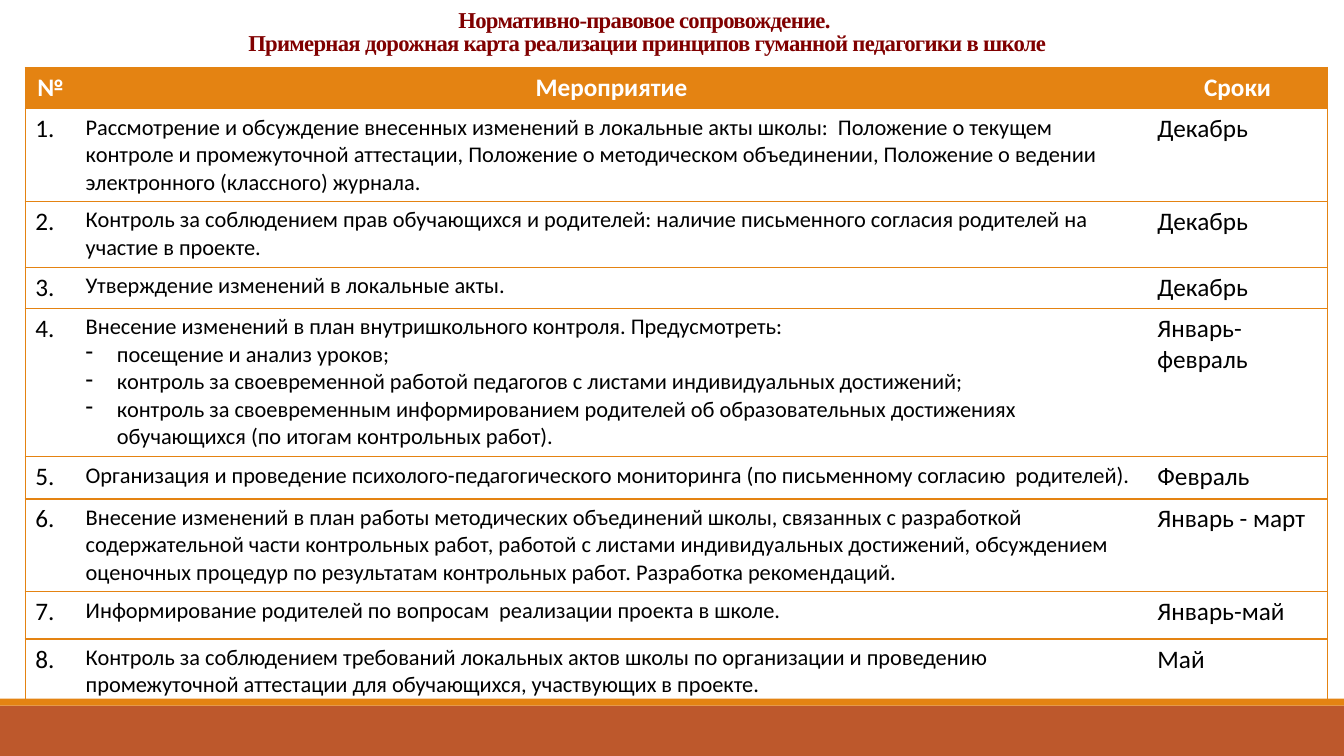
import dataclasses
import typing

import lxml.etree
import pptx
import pptx.dml.color
import pptx.enum.shapes
import pptx.enum.text
import pptx.oxml.ns
import pptx.util

COLORS = {
    "orange": "E48312",
    "rust": "BD582C",
    "maroon": "800000",
    "white": "FFFFFF",
    "black": "000000",
}
SLIDE_WIDTH = pptx.util.Inches(13.33)
SLIDE_HEIGHT = pptx.util.Inches(7.5)
COLUMN_SHARES = (3.75, 79.74, 13.43)
HEADINGS = ("№", "Мероприятие", "Сроки")
HEADING_SHARE = 5.47
CENTER = pptx.enum.text.PP_ALIGN.CENTER
LEFT = pptx.enum.text.PP_ALIGN.LEFT


@dataclasses.dataclass(frozen=True)
class Band:
    top: float
    height: float
    color: str


@dataclasses.dataclass(frozen=True)
class Step:
    activity: str
    term: str
    height: float
    points: tuple[str, ...] = ()


BANDS = (Band(93.33, 6.67, "rust"), Band(92.4, 0.93, "orange"))

STEPS = (
    Step("Рассмотрение и обсуждение внесенных изменений в локальные акты школы:  Положение о текущем "
         "контроле и промежуточной аттестации, Положение о методическом объединении, Положение о ведении "
         "электронного (классного) журнала.", "Декабрь", 12.27),
    Step("Контроль за соблюдением прав обучающихся и родителей: наличие письменного согласия родителей на "
         "участие в проекте.", "Декабрь", 8.67),
    Step("Утверждение изменений в локальные акты.", "Декабрь", 5.47),
    Step("Внесение изменений в план внутришкольного контроля. Предусмотреть:", "Январь-февраль", 19.6,
         ("посещение и анализ уроков;",
          "контроль за своевременной работой педагогов с листами индивидуальных достижений;",
          "контроль за своевременным информированием родителей об образовательных достижениях "
          "обучающихся (по итогам контрольных работ).")),
    Step("Организация и проведение психолого-педагогического мониторинга (по письменному согласию  родителей).",
         "Февраль", 5.6),
    Step("Внесение изменений в план работы методических объединений школы, связанных с разработкой "
         "содержательной части контрольных работ, работой с листами индивидуальных достижений, обсуждением "
         "оценочных процедур по результатам контрольных работ. Разработка рекомендаций.", "Январь - март", 12.27),
    Step("Информирование родителей по вопросам  реализации проекта в школе.", "Январь-май", 6.27),
    Step("Контроль за соблюдением требований локальных актов школы по организации и проведению "
         "промежуточной аттестации для обучающихся, участвующих в проекте.", "Май", 8.67),
)


def across(share: float) -> int:
    return round(SLIDE_WIDTH * share / 100)


def down(share: float) -> int:
    return round(SLIDE_HEIGHT * share / 100)


def rgb(color: str) -> pptx.dml.color.RGBColor:
    return pptx.dml.color.RGBColor.from_string(COLORS[color])


def format_font(font: typing.Any, name: str, size: float, color: str, bold: bool) -> None:
    for attribute, value in {"name": name, "size": pptx.util.Pt(size), "bold": bold}.items():
        setattr(font, attribute, value)
    font.color.rgb = rgb(color)


def add_element(parent: typing.Any, tag: str, **attributes: str) -> typing.Any:
    return lxml.etree.SubElement(parent, pptx.oxml.ns.qn(tag), **attributes)


def draw_band(slide: typing.Any, band: Band) -> None:
    shape = slide.shapes.add_shape(
        pptx.enum.shapes.MSO_SHAPE.RECTANGLE, 0, down(band.top), SLIDE_WIDTH, down(band.height))
    shape.shadow.inherit = False
    shape.fill.solid()
    shape.fill.fore_color.rgb = rgb(band.color)
    shape.line.fill.background()


def draw_title(slide: typing.Any) -> None:
    shape = slide.shapes.add_textbox(0, 0, across(96.25), down(8.13))
    frame = shape.text_frame
    frame.word_wrap = True
    frame.vertical_anchor = pptx.enum.text.MSO_ANCHOR.BOTTOM
    paragraph = frame.paragraphs[0]
    paragraph.alignment = CENTER
    paragraph.line_spacing = 0.85
    paragraph.text = ("Нормативно-правовое сопровождение. \v"
                      "Примерная дорожная карта реализации принципов гуманной педагогики в школе")
    for run in paragraph.runs:
        format_font(run.font, "Times New Roman", 16.2, "maroon", True)
        run.font._element.set("spc", "-50")


def draw_borders(cell: typing.Any, column: int) -> None:
    visible = {"a:lnL": column == 0, "a:lnR": column == len(HEADINGS) - 1, "a:lnT": True, "a:lnB": True}
    properties = cell._tc.get_or_add_tcPr()
    for tag, shown in visible.items():
        line = add_element(properties, tag, w=str(pptx.util.Pt(1)))
        if shown:
            add_element(add_element(line, "a:solidFill"), "a:srgbClr", val=COLORS["orange"])
        else:
            add_element(line, "a:noFill")


def write_cell(cell: typing.Any, lines: tuple[str, ...], size: float, heading: bool) -> None:
    cell.text_frame.text = "\n".join(lines)
    for index, paragraph in enumerate(cell.text_frame.paragraphs):
        paragraph.alignment = CENTER if heading else LEFT
        format_font(paragraph.runs[0].font, "Calibri", size, "white" if heading else "black", heading)
        if index:
            properties = paragraph._p.get_or_add_pPr()
            indent = pptx.util.Inches(0.31)
            properties.set("marL", str(indent))
            properties.set("indent", str(-indent))
            add_element(properties, "a:buChar", char="-")
    if heading:
        cell.fill.solid()
        cell.fill.fore_color.rgb = rgb("orange")
    else:
        cell.fill.background()


def draw_roadmap(slide: typing.Any) -> None:
    heights = (HEADING_SHARE, *(step.height for step in STEPS))
    table = slide.shapes.add_table(
        len(heights), len(HEADINGS), across(1.88), down(8.93),
        across(sum(COLUMN_SHARES)), down(sum(heights))).table
    table.horz_banding = False
    for column, share in zip(table.columns, COLUMN_SHARES):
        column.width = across(share)
    for row, share in zip(table.rows, heights):
        row.height = down(share)
    contents = [tuple((heading,) for heading in HEADINGS)]
    for number, step in enumerate(STEPS, 1):
        contents.append(((f"{number}.",), (step.activity, *step.points), (step.term,)))
    for row_index, row_lines in enumerate(contents):
        heading = row_index == 0
        for column_index, lines in enumerate(row_lines):
            cell = table.cell(row_index, column_index)
            draw_borders(cell, column_index)
            write_cell(cell, lines, 16 if column_index == 1 and not heading else 18, heading)


def main() -> None:
    presentation = pptx.Presentation()
    presentation.slide_width = SLIDE_WIDTH
    presentation.slide_height = SLIDE_HEIGHT
    slide = presentation.slides.add_slide(presentation.slide_layouts[6])
    for band in BANDS:
        draw_band(slide, band)
    draw_title(slide)
    draw_roadmap(slide)
    presentation.save("out.pptx")


if __name__ == "__main__":
    main()
